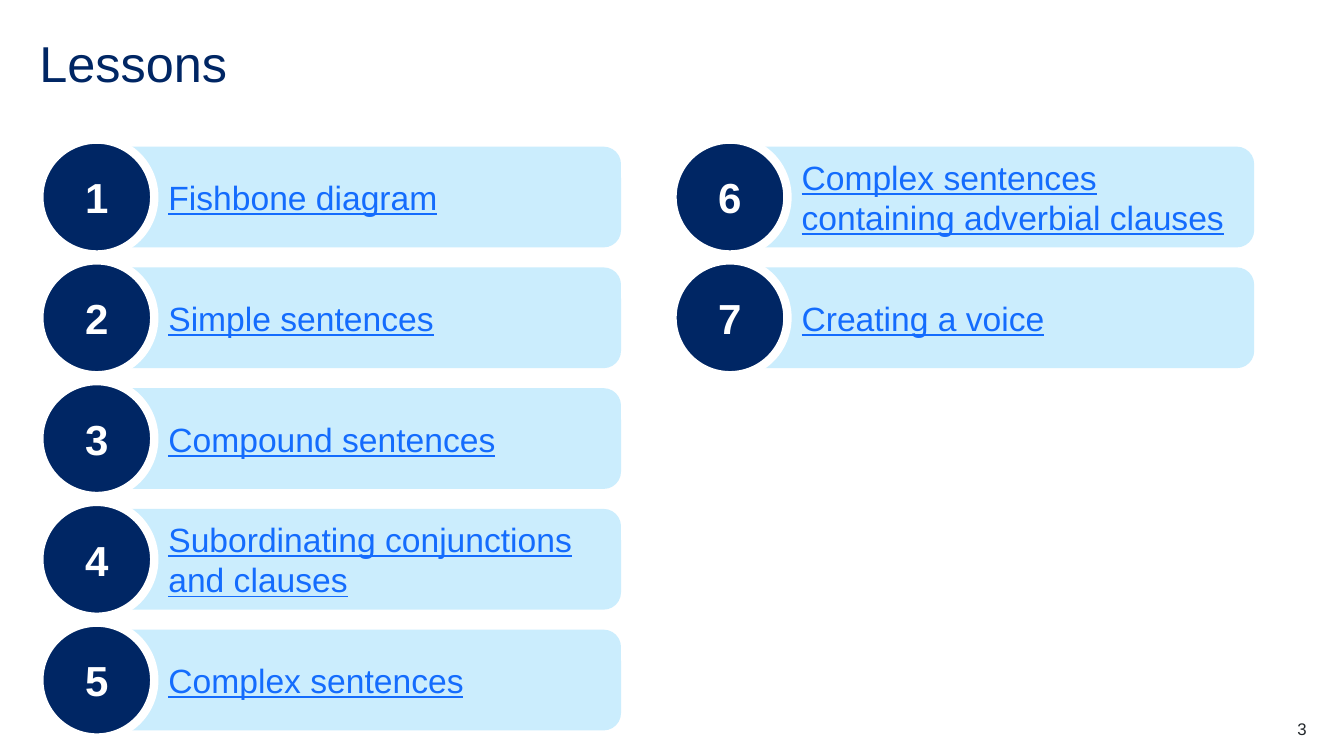
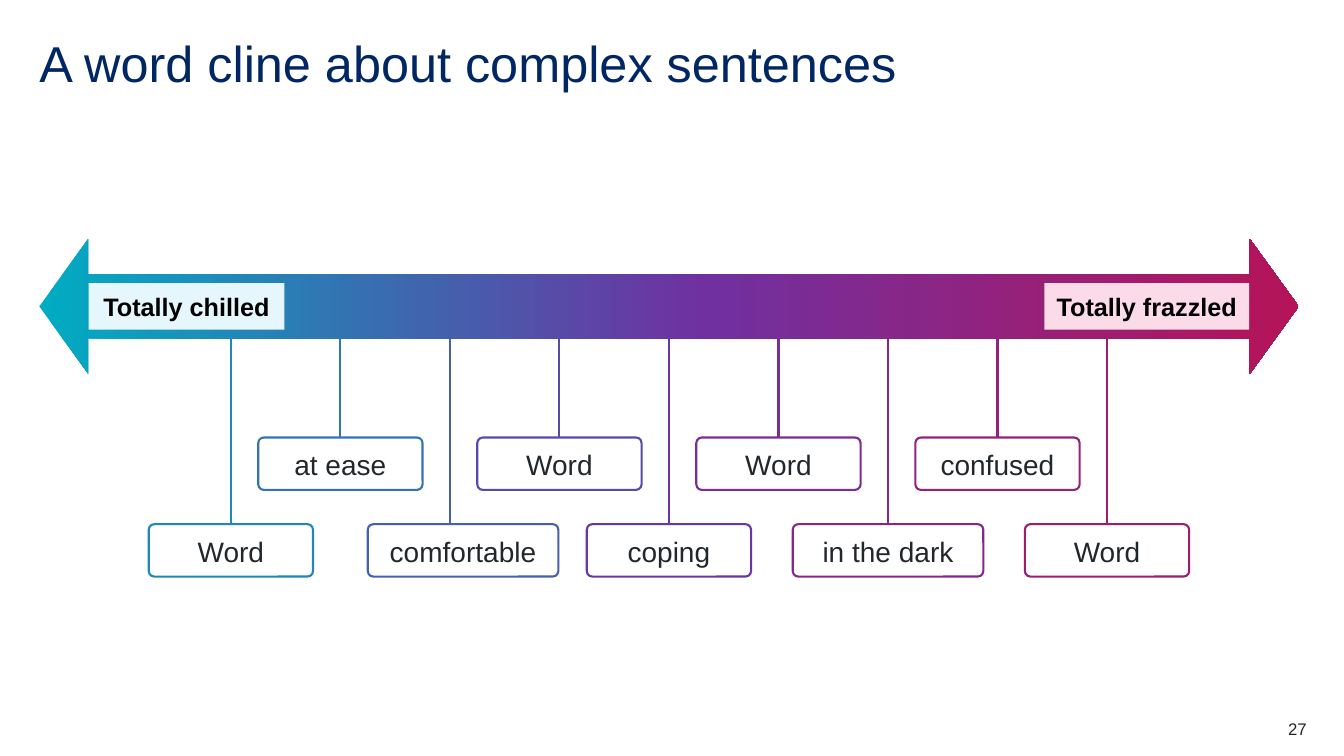
from copy import deepcopy

from pptx import Presentation
from pptx.dml.color import RGBColor
from pptx.enum.shapes import MSO_CONNECTOR, MSO_SHAPE
from pptx.enum.text import MSO_ANCHOR, MSO_AUTO_SIZE, PP_ALIGN
from pptx.oxml.ns import qn
from pptx.oxml.xmlchemy import OxmlElement
from pptx.util import Inches, Pt

COLOURS = {
    "navy": "002664",
    "panel": "CBEDFD",
    "link": "146CFD",
    "white": "FFFFFF",
    "black": "000000",
    "text": "22272B",
    "chilled": "E5F7FC",
    "frazzled": "FBDBE7",
}
FONT = "Arial"
MARGIN = 0.39
TITLE_BOX = (MARGIN, 0.39, 12.56, 0.6)
NUMBER_BOX = (12.17, 7.13, 0.79, 0.2)

LESSONS = [
    "Fishbone diagram",
    "Simple sentences",
    "Compound sentences",
    "Subordinating conjunctions and clauses",
    "Complex sentences",
    "Complex sentences containing adverbial clauses",
    "Creating a voice",
]
LESSONS_PER_COLUMN = 5

GRADIENT = [(0, "00ACC2"), (0.53, "7030A0"), (1, "B51458")]
WORD_WIDTH, WIDE_WORD_WIDTH = 1.63, 1.89
CLINE_WORDS = [
    ("Word", "2088B8", WORD_WIDTH, 0),
    ("at ease", "3274B3", WORD_WIDTH, 0),
    ("comfortable", "4560AD", WIDE_WORD_WIDTH, 0.13),
    ("Word", "574BA7", WORD_WIDTH, 0),
    ("coping", "6A37A2", WORD_WIDTH, 0),
    ("Word", "782D97", WORD_WIDTH, 0),
    ("in the dark", "85278A", WIDE_WORD_WIDTH, 0),
    ("confused", "92227D", WORD_WIDTH, 0),
    ("Word", "9E1D70", WORD_WIDTH, 0),
]


def rgb(colour):
    """Return the colour for a palette name or a hex string."""
    return RGBColor.from_string(COLOURS.get(colour, colour))


def inches(box):
    """Convert a box of numbers to lengths."""
    return [Inches(value) for value in box]


def write(shape, text, size, colour, align=PP_ALIGN.LEFT, anchor=MSO_ANCHOR.MIDDLE,
          insets=(0.1, 0.05, 0.1, 0.05), bold=False, underline=False):
    """Set and format the text of a shape and return its paragraph."""
    frame = shape.text_frame
    frame.text = text
    frame.word_wrap = True
    frame.auto_size = MSO_AUTO_SIZE.NONE
    frame.vertical_anchor = anchor
    (frame.margin_left, frame.margin_top,
     frame.margin_right, frame.margin_bottom) = inches(insets)
    para = frame.paragraphs[0]
    para.alignment = align
    font = para.runs[0].font
    font.name, font.size = FONT, Pt(size)
    font.bold, font.underline = bold, underline
    font.color.rgb = rgb(colour)
    return para


def add_box(page, kind, box, fill=None, line=None, line_width=1.5, adjustments=()):
    """Add a preset shape with a plain fill and outline."""
    shape = page.shapes.add_shape(kind, *inches(box))
    shape.shadow.inherit = False
    for index, value in enumerate(adjustments):
        shape.adjustments[index] = value
    if fill:
        shape.fill.solid()
        shape.fill.fore_color.rgb = rgb(fill)
    else:
        shape.fill.background()
    if line:
        shape.line.color.rgb = rgb(line)
        shape.line.width = Pt(line_width)
    else:
        shape.line.fill.background()
    return shape


def add_page(deck, title, number):
    """Add a slide with the shared title and slide number."""
    page = deck.slides.add_slide(deck.slide_layouts[5])
    heading = page.shapes.title
    heading.left, heading.top, heading.width, heading.height = inches(TITLE_BOX)
    para = write(heading, title, 36, "navy", anchor=MSO_ANCHOR.TOP, insets=(0, 0, 0, 0))
    para.line_spacing = 0.9
    number_box = page.shapes.add_textbox(*inches(NUMBER_BOX))
    write(number_box, str(number), 12, "text", PP_ALIGN.RIGHT, MSO_ANCHOR.TOP, (0, 0, 0, 0))
    return page


def add_lesson(page, left, top, number, name):
    """Add one numbered lesson with its panel and circle."""
    panel = add_box(page, MSO_SHAPE.ROUNDED_RECTANGLE, (left + 0.74, top + 0.07, 5.03, 1),
                    "panel", adjustments=[0.173])
    write(panel, name, 24, "link", insets=(0.49, 0.05, 0.1, 0.05), underline=True)
    circle = add_box(page, MSO_SHAPE.OVAL, (left, top, 1.14, 1.14), "navy", "white", 6)
    write(circle, str(number), 30, "white", PP_ALIGN.CENTER, bold=True)


def build_lessons(deck):
    """Build the slide that lists the lessons in columns."""
    page = add_page(deck, "Lessons", 3)
    for index, name in enumerate(LESSONS):
        column, row = divmod(index, LESSONS_PER_COLUMN)
        add_lesson(page, MARGIN + column * 6.28, 1.385 + row * 1.198, index + 1, name)


def add_scale(page, box):
    """Add the gradient arrow with a label inside each end."""
    left, top, width, height = box
    arrow = add_box(page, MSO_SHAPE.LEFT_RIGHT_ARROW, box, adjustments=[0.475, 0.362])
    arrow.fill.gradient()
    stop_list = arrow._element.spPr.find(".//" + qn("a:gsLst"))
    stop_list.append(deepcopy(stop_list[-1]))
    for stop, (position, colour) in zip(arrow.fill.gradient_stops, GRADIENT):
        stop.position = position
        stop.color.rgb = rgb(colour)
    arrow.fill.gradient_angle = 0
    label_height, head = 0.46, 0.49
    label_top = top + (height - label_height) / 2
    for text, fill, label_left, label_width in (
        ("Totally chilled", "chilled", left + head, 1.94),
        ("Totally frazzled", "frazzled", left + width - head - 2.03, 2.03),
    ):
        label = add_box(page, MSO_SHAPE.RECTANGLE,
                        (label_left, label_top, label_width, label_height), fill)
        write(label, text, 18, "black", PP_ALIGN.CENTER,
              insets=(0.09, 0.04, 0.09, 0.04), bold=True)


def add_word(page, centre, start, top, word, colour, width, shift):
    """Add a word box and the line that ties it to the scale."""
    box = add_box(page, MSO_SHAPE.ROUNDED_RECTANGLE,
                  (centre + shift - width / 2, top, width, 0.52),
                  line=colour, adjustments=[0.106])
    write(box, word, 20, "text", PP_ALIGN.CENTER, MSO_ANCHOR.BOTTOM, (0.16, 0, 0.16, 0.07))
    tie = page.shapes.add_connector(MSO_CONNECTOR.STRAIGHT,
                                    *inches((centre, start, centre, top)))
    tie.line.color.rgb = rgb(colour)
    tie.line.width = Pt(1.5)
    tie._element.spPr.append(OxmlElement("a:effectLst"))


def build_word_cline(deck):
    """Build the slide with the word scale."""
    page = add_page(deck, "A word cline about complex sentences", 27)
    add_scale(page, (MARGIN, 2.37, 12.49, 1.34))
    first, last = 2.29, 10.98
    step = (last - first) / (len(CLINE_WORDS) - 1)
    for index, entry in enumerate(CLINE_WORDS):
        top = 4.34 if index % 2 else 5.2
        add_word(page, first + index * step, 3.36, top, *entry)


def main():
    """Build and save the deck."""
    deck = Presentation()
    deck.slide_width, deck.slide_height = Inches(13.33), Inches(7.5)
    build_lessons(deck)
    build_word_cline(deck)
    deck.save("out.pptx")


if __name__ == "__main__":
    main()
